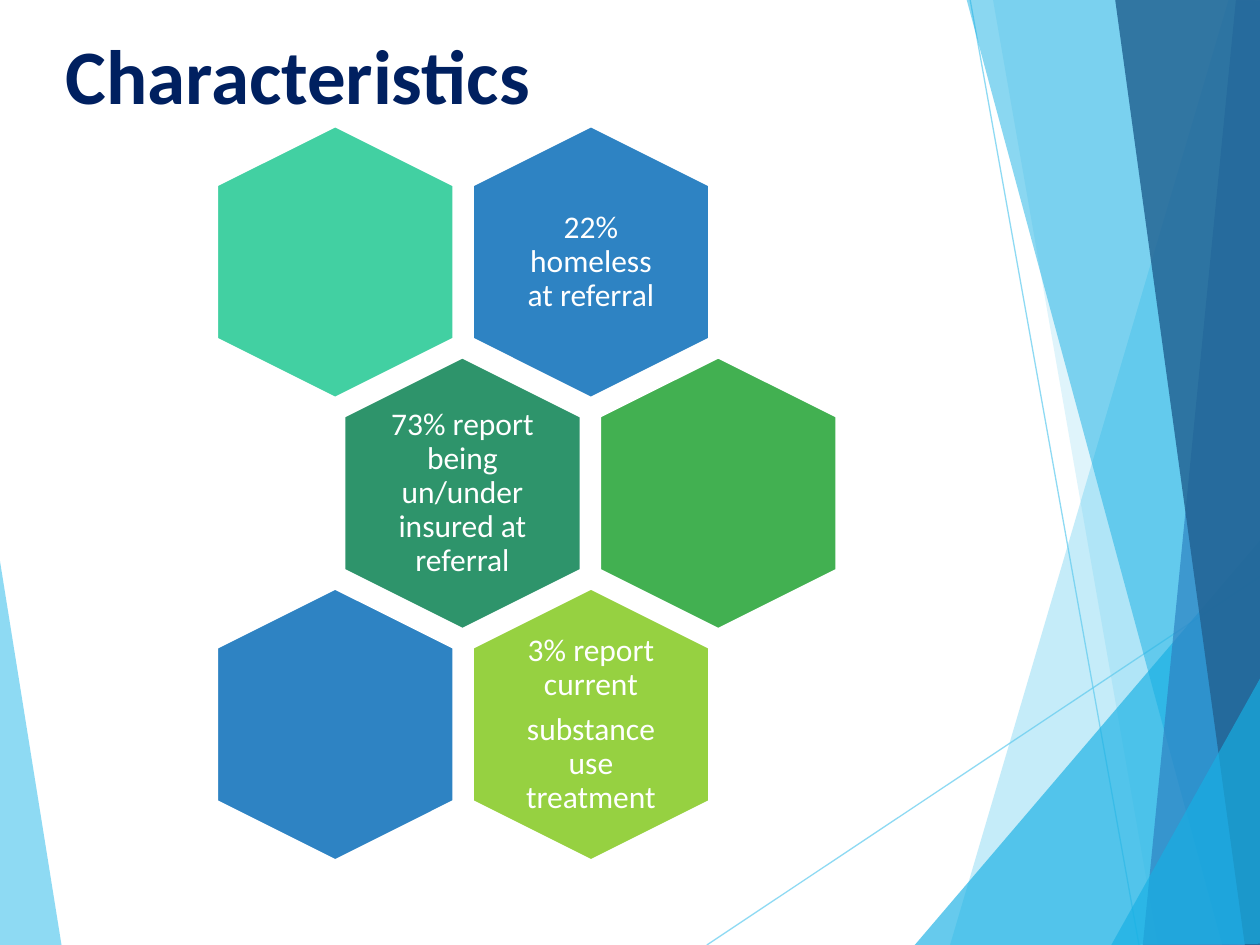
from lxml import etree
from pptx import Presentation
from pptx.dml.color import RGBColor
from pptx.enum.shapes import MSO_CONNECTOR, MSO_SHAPE
from pptx.enum.text import MSO_ANCHOR, PP_ALIGN
from pptx.oxml.ns import qn
from pptx.util import Inches, Pt

STRAIGHT = MSO_CONNECTOR.STRAIGHT
HEXAGON = MSO_SHAPE.HEXAGON
TOP, MIDDLE = MSO_ANCHOR.TOP, MSO_ANCHOR.MIDDLE
LEFT, CENTER = PP_ALIGN.LEFT, PP_ALIGN.CENTER

WHITE = RGBColor(0xFF, 0xFF, 0xFF)
NAVY = RGBColor(0x00, 0x20, 0x60)
SKY = RGBColor(0x5F, 0xCB, 0xEF)
CYAN = RGBColor(0x17, 0xB0, 0xE4)
BLUE = RGBColor(0x2E, 0x83, 0xC3)
DARK_BLUE = RGBColor(0x22, 0x62, 0x92)
MINT = RGBColor(0x42, 0xD0, 0xA2)
TEAL = RGBColor(0x2E, 0x94, 0x6B)
GREEN = RGBColor(0x42, 0xB0, 0x51)
LIME = RGBColor(0x96, 0xD1, 0x41)

LEFT_FACET = ([(-0.01, 4.39), (0.49, 7.51), (-0.01, 7.5)], SKY, 70)
RAYS = [((5.61, 7.5), (10.01, 4.57)), ((7.7, 0), (9.04, 7.5))]
RIGHT_FACETS = [
    ([(9.75, 0), (7.54, 7.5), (10.02, 7.51), (10.01, 0.01)], SKY, 36),
    ([(7.88, -0.01), (9.19, 7.5), (10.01, 7.5), (10.01, -0.01)], SKY, 20),
    ([(7.26, 7.5), (10, 4.29), (10.01, 7.5)], CYAN, 66),
    ([(7.67, -0.01), (9.7, 7.5), (10.01, 7.49), (10.01, -0.01)], CYAN, 50),
    ([(9.81, -0.01), (9.07, 7.5), (10.01, 7.5), (10, -0.01)], BLUE, 70),
    ([(8.85, -0.01), (9.88, 7.5), (10.02, 7.5), (10, -0.01)], DARK_BLUE, 82),
    ([(8.82, 7.5), (10.02, 5.35), (10.02, 7.49)], CYAN, 66),
]

HONEYCOMB = [
    [(MINT, []), (BLUE, ["22% homeless at referral"])],
    [(TEAL, ["73% report being un/under insured at referral"]), (GREEN, [])],
    [(BLUE, []), (LIME, ["3% report current", "substance use treatment"])],
]
HEX_LEFT, HEX_TOP = 1.58, 1.14
HEX_WIDTH, HEX_HEIGHT = 2.16, 1.88
COLUMN_STEP, ROW_STEP, ROW_SHIFT = 2.03, 1.835, 1.01
LABEL_WIDTH, LABEL_HEIGHT = 1.29, 1.49


class SlideBuilder:
    font_name = "Calibri"
    label_size = Pt(18)
    title_size = Pt(44)

    def __init__(self, slide):
        self.slide = slide
        self.shapes = slide.shapes

    def set_opacity(self, color_format_owner, percent):
        color = color_format_owner.find(".//" + qn("a:srgbClr"))
        etree.SubElement(color, qn("a:alpha"), val=str(percent * 1000))

    def add_run(self, paragraph, text, size, color, bold=False):
        run = paragraph.add_run()
        run.text = text
        run.font.name = self.font_name
        run.font.size = size
        run.font.bold = bold
        run.font.color.rgb = color

    def title(self, text, left, top, width, height):
        title = self.shapes.title
        title.left, title.top = Inches(left), Inches(top)
        title.width, title.height = Inches(width), Inches(height)
        title.text_frame.vertical_anchor = TOP
        paragraph = title.text_frame.paragraphs[0]
        paragraph.alignment = LEFT
        self.add_run(paragraph, text, self.title_size, NAVY, bold=True)

    def facet(self, points, color, opacity):
        corners = [(Inches(x), Inches(y)) for x, y in points]
        builder = self.shapes.build_freeform(*corners[0])
        builder.add_line_segments(corners[1:], close=True)
        shape = builder.convert_to_shape()
        shape.shadow.inherit = False
        shape.fill.solid()
        shape.fill.fore_color.rgb = color
        shape.line.fill.background()
        self.set_opacity(shape.fill._xPr, opacity)

    def ray(self, start, end):
        ends = [Inches(value) for value in (*start, *end)]
        connector = self.shapes.add_connector(STRAIGHT, *ends)
        connector.line.color.rgb = SKY
        connector.line.width = Pt(0.75)
        properties = connector._element.spPr
        self.set_opacity(properties, 70)
        etree.SubElement(properties, qn("a:effectLst"))

    def hexagon(self, left, top, color):
        shape = self.shapes.add_shape(
            HEXAGON, Inches(left), Inches(top), Inches(HEX_WIDTH), Inches(HEX_HEIGHT)
        )
        shape.rotation = 90
        shape.shadow.inherit = False
        shape.fill.solid()
        shape.fill.fore_color.rgb = color
        shape.line.color.rgb = WHITE
        shape.line.width = Pt(1.5)

    def label(self, left, top, lines):
        box = self.shapes.add_textbox(
            Inches(left), Inches(top), Inches(LABEL_WIDTH), Inches(LABEL_HEIGHT)
        )
        frame = box.text_frame
        frame.word_wrap = True
        frame.vertical_anchor = MIDDLE
        frame.margin_left = frame.margin_right = Inches(0.07)
        frame.margin_top = frame.margin_bottom = Inches(0.07)
        for index, line in enumerate(lines):
            paragraph = frame.add_paragraph() if index else frame.paragraphs[0]
            paragraph.alignment = CENTER
            paragraph.line_spacing = 0.9
            paragraph.space_after = Pt(6.3)
            self.add_run(paragraph, line, self.label_size, WHITE)


def main():
    presentation = Presentation()
    presentation.slide_width = Inches(10)
    presentation.slide_height = Inches(7.5)
    slide = presentation.slides.add_slide(presentation.slide_layouts[5])
    builder = SlideBuilder(slide)

    builder.facet(*LEFT_FACET)
    for start, end in RAYS:
        builder.ray(start, end)
    for facet in RIGHT_FACETS:
        builder.facet(*facet)

    builder.title("Characteristics", 0.42, 0.17, 6.94, 1.44)

    for row, cells in enumerate(HONEYCOMB):
        for column, (color, lines) in enumerate(cells):
            left = HEX_LEFT + column * COLUMN_STEP + row % 2 * ROW_SHIFT
            top = HEX_TOP + row * ROW_STEP
            builder.hexagon(left, top, color)
            if lines:
                label_left = left + (HEX_WIDTH - LABEL_WIDTH) / 2
                label_top = top + (HEX_HEIGHT - LABEL_HEIGHT) / 2
                builder.label(label_left, label_top, lines)

    presentation.save("out.pptx")


if __name__ == "__main__":
    main()
